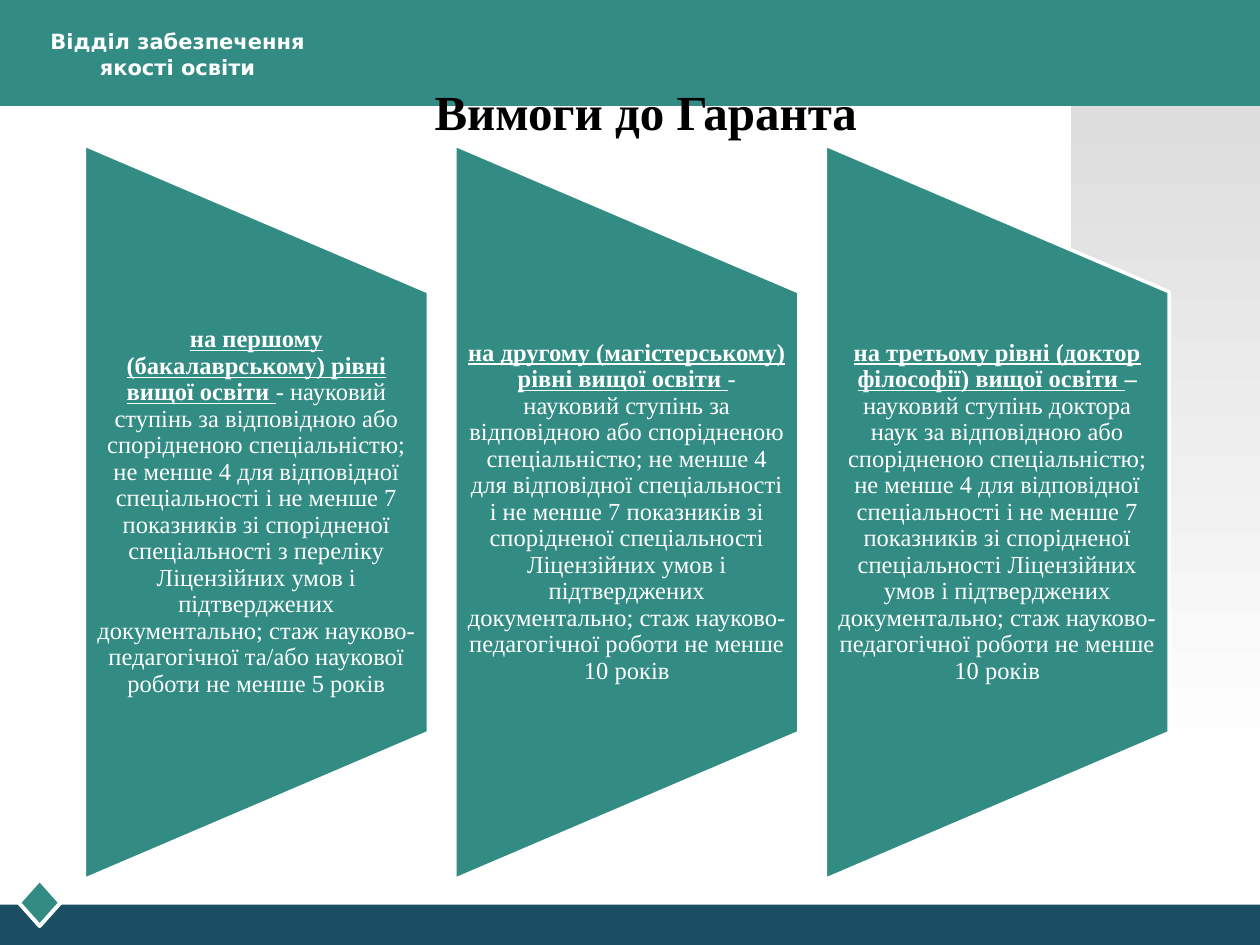
from pptx import Presentation
from pptx.dml.color import RGBColor
from pptx.enum.shapes import MSO_SHAPE as Shape
from pptx.enum.text import MSO_ANCHOR as Anchor, PP_ALIGN as Align
from pptx.util import Inches, Pt

TEAL = RGBColor(0x32, 0x8C, 0x83)
NAVY = RGBColor(0x1B, 0x4E, 0x63)
GREY = RGBColor(0xDD, 0xDD, 0xDD)
WHITE = RGBColor(0xFF, 0xFF, 0xFF)
BLACK = RGBColor(0, 0, 0)
SERIF = "Times New Roman"

WIDTH, HEIGHT = 10, 7.5
BAND_HEIGHT = 0.84
COLUMN_WIDTH, COLUMN_GAP = 2.73, 0.21

COMMON = ("спорідненою спеціальністю; не менше 4 для відповідної спеціальності "
          "і не менше 7 показників зі спорідненої спеціальності ")
CONFIRMED = "Ліцензійних умов і підтверджених документально; стаж науково-педагогічної "

# Each run: text, bold, underline
REQUIREMENTS = [
    [("на першому (бакалаврському) рівні вищої освіти ", True, True),
     ("- науковий ступінь за відповідною або " + COMMON + "з переліку " + CONFIRMED
      + "та/або наукової роботи не менше 5 років", False, False)],
    [("на другому (магістерському) рівні вищої освіти ", True, True),
     ("- науковий ступінь за відповідною або " + COMMON + CONFIRMED
      + "роботи не менше 10 років", False, False)],
    [("на третьому рівні (доктор філософії) вищої освіти ", True, True),
     ("–", True, False),
     (" науковий ступінь доктора наук за відповідною або " + COMMON + CONFIRMED
      + "роботи не менше 10 років", False, False)],
]


def add_block(slide, kind, box, color=None, outline=0):
    block = slide.shapes.add_shape(kind, *map(Inches, box))
    block.shadow.inherit = False
    if color is not None:
        block.fill.solid()
        block.fill.fore_color.rgb = color
    if outline:
        block.line.color.rgb = WHITE
        block.line.width = Pt(outline)
    else:
        block.line.fill.background()
    return block


def add_text(slide, box, runs, font, size, color, align=Align.LEFT):
    """Add a wrapping text box of (text, bold, underline) runs; return its frame."""
    frame = slide.shapes.add_textbox(*map(Inches, box)).text_frame
    frame.word_wrap = True
    paragraph = frame.paragraphs[0]
    paragraph.alignment = align
    for words, bold, underline in runs:
        run = paragraph.add_run()
        run.text = words
        run.font.name, run.font.size = font, Pt(size)
        run.font.bold, run.font.underline = bold, underline
        run.font.color.rgb = color
    return frame


def add_footer(slide, left, top, width, height):
    add_block(slide, Shape.RECTANGLE, (left, top, width, height), NAVY)
    add_block(slide, Shape.DIAMOND, (left + 0.15, top - 0.2, 0.33, 0.37), TEAL, 2.25)


def add_header(slide, left, top, width, height):
    add_block(slide, Shape.RECTANGLE, (left, top, width, height), TEAL)
    add_text(slide, (left + 0.12, top + 0.18, 2.58, height - 0.18),
             [("Відділ забезпечення якості освіти", True, False)],
             "DejaVu Sans", 12, WHITE, Align.CENTER)


def add_side_panel(slide, left, top, width, height):
    panel = add_block(slide, Shape.RECTANGLE, (left, top, width, height))
    panel.fill.gradient()
    panel.fill.gradient_angle = 270
    for stop, color, position in zip(panel.fill.gradient_stops, (GREY, WHITE), (0, 1)):
        stop.color.rgb = color
        stop.position = position


def add_requirement(slide, left, top, width, height, runs):
    """Add a trapezoid lying on its side, with its text in the middle three fifths."""
    # The frame is given unrotated: its sides swap about the same centre.
    turned = (left + (width - height) / 2, top + (height - width) / 2, height, width)
    trapezoid = add_block(slide, Shape.FLOWCHART_MANUAL_OPERATION, turned, TEAL, 2)
    trapezoid.rotation = 270
    frame = add_text(slide, (left, top + height / 5, width, height * 3 / 5), runs,
                     SERIF, 14, WHITE, Align.CENTER)
    frame.vertical_anchor = Anchor.MIDDLE
    frame.margin_top = frame.margin_bottom = 0
    frame.paragraphs[0].line_spacing = 0.9


def add_requirements(slide, left, top, height):
    for column, runs in enumerate(REQUIREMENTS):
        column_left = left + column * (COLUMN_WIDTH + COLUMN_GAP)
        add_requirement(slide, column_left, top, COLUMN_WIDTH, height, runs)


def main():
    deck = Presentation()
    deck.slide_width, deck.slide_height = Inches(WIDTH), Inches(HEIGHT)
    slide = deck.slides.add_slide(deck.slide_layouts[6])
    add_side_panel(slide, WIDTH * 0.85, BAND_HEIGHT, WIDTH * 0.15, HEIGHT * 0.7)
    add_header(slide, 0, 0, WIDTH, BAND_HEIGHT)
    add_footer(slide, 0, 7.18, WIDTH, HEIGHT - 7.18)
    add_requirements(slide, 0.67, 1.15, 5.83)
    add_text(slide, (3.35, 0.6, 4.09, 0.57), [("Вимоги до Гаранта", True, False)],
             SERIF, 28, BLACK)
    deck.save("out.pptx")


if __name__ == "__main__":
    main()
